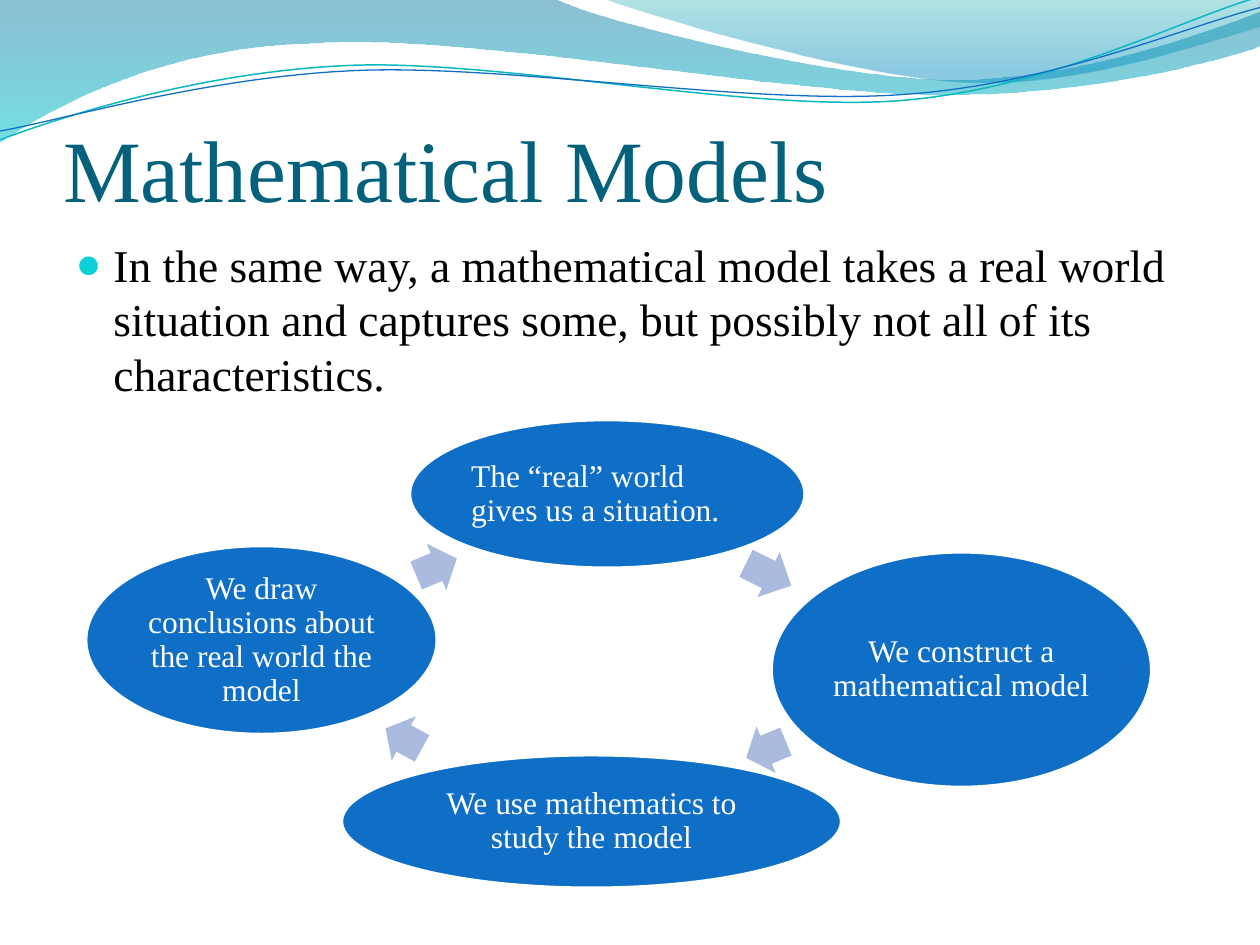
from dataclasses import dataclass
from itertools import islice

from lxml.etree import SubElement
from pptx import Presentation
from pptx.dml.color import RGBColor
from pptx.enum.shapes import MSO_SHAPE
from pptx.enum.text import MSO_ANCHOR, MSO_AUTO_SIZE, PP_ALIGN
from pptx.oxml.ns import qn
from pptx.util import Inches, Pt

COLUMNS, ROWS = 100, 75


@dataclass(frozen=True)
class Theme:
    """Colours and type sizes of the slide."""
    font: str = "Times New Roman"
    title: str = "04617B"
    body: str = "000000"
    bullet: str = "0BD0D9"
    step: str = "0F6FC6"
    light: str = "FFFFFF"
    arrow: str = "ABBBDF"
    title_size: int = 50
    body_size: int = 26
    step_size: int = 18


@dataclass(frozen=True)
class Box:
    """A region measured in grid columns and rows of a given cell size."""
    left: float
    top: float
    width: float
    height: float
    cell_width: float
    cell_height: float

    def point(self, column, row):
        """Return the slide position of a point inside the box."""
        return (round((self.left + column) * self.cell_width),
                round((self.top + row) * self.cell_height))

    def inner(self, left, top, width, height):
        """Return a box placed relative to this one."""
        return Box(self.left + left, self.top + top, width, height,
                   self.cell_width, self.cell_height)

    def frame(self):
        """Return left, top, width and height as slide lengths."""
        return (*self.point(0, 0), round(self.width * self.cell_width),
                round(self.height * self.cell_height))


THEME = Theme()

WAVE_FILLS = [
    ((0, 0), [(44, -0.1), (47.6, 1.7, 66.4, 6.3, 75.8, 6.3),
              (85.3, 6.3, 95.8, 2.6, 100, 0.9), (100.1, 3.6),
              (98.3, 4.4, 87, 7.6, 74.6, 7.5),
              (62.2, 7.5, 38.2, 2.8, 25.7, 3.4),
              (12.9, 3.6, 4.6, 8.3, -0.1, 11.3)],
     [(0, "0074A1", 45), (1, "00C6CF", 55)]),
    ((47.9, -0.1), [(50.9, 1.1, 68.2, 6.2, 76.9, 6.5),
                    (85.6, 6.9, 96.1, 3.2, 100, 2.1), (100, 0)],
     [(0, "00A1A9", 30), (0.8, "008BBF", 45)]),
]
WAVE_LINES = [
    ((0, 11.1), [(4.8, 9.3, 15.8, 5.7, 27.7, 5.2),
                 (39.5, 4.7, 59.3, 8.9, 71.3, 8),
                 (83.3, 7.1, 93.8, 1.5, 99.8, -0.2)], "0AB8BF", 0.85),
    ((0, 10.4), [(4.7, 9.6, 16.4, 6.1, 28.3, 5.6),
                 (40.3, 5.1, 59.7, 8.4, 71.7, 7.5),
                 (83.6, 6.7, 94.1, 2.1, 100, 0.6)], "0F6FC6", 0.75),
]
STEPS = [
    ("The “real” world gives us a situation.", (25.7, 0, 31.4, 11.8), PP_ALIGN.LEFT),
    ("We construct a mathematical model", (54.4, 10.5, 30.2, 18.7), PP_ALIGN.CENTER),
    ("We use mathematics to study the model", (20.3, 26.6, 39.7, 10.6), PP_ALIGN.CENTER),
    ("We draw conclusions about the real world the model", (0, 10, 27.9, 15),
     PP_ALIGN.CENTER),
]
ARROWS = [
    ((52.2, 10.3, 4, 4), 26.3),
    ((52.3, 24.2, 3.4, 4), 157.7),
    ((23.6, 23.3, 3.3, 4), 208.7),
    ((26.1, 9.7, 3.5, 4), 337.2),
]


def apply_formats(target, formats):
    """Set every attribute named in a dict of format values."""
    for name, value in formats.items():
        setattr(target, name, value)


def place(shape, box):
    """Move a shape to a box."""
    apply_formats(shape, dict(zip(("left", "top", "width", "height"), box.frame())))


def write(shape, text, size, color, paragraph_formats, frame_formats):
    """Write one formatted paragraph into a shape."""
    frame = shape.text_frame
    apply_formats(frame, {"word_wrap": True, "auto_size": MSO_AUTO_SIZE.NONE,
                          **frame_formats})
    paragraph = frame.paragraphs[0]
    apply_formats(paragraph, paragraph_formats)
    run = paragraph.add_run()
    run.text = text
    apply_formats(run.font, {"name": THEME.font, "size": Pt(size)})
    run.font.color.rgb = RGBColor.from_string(color)
    return paragraph


def add_path(slide, box, start, segments, close):
    """Draw an outline whose six-number segments are Bézier curves."""
    points = [box.point(*segment[index:index + 2])
              for segment in segments for index in range(0, len(segment), 2)]
    builder = slide.shapes.build_freeform(*box.point(*start))
    builder.add_line_segments(points, close=close)
    shape = builder.convert_to_shape()
    shape.shadow.inherit = False
    outline = next(shape.element.iter(qn("a:path")))
    lines = iter(outline.findall(qn("a:lnTo")))
    for segment in segments:
        parts = list(islice(lines, len(segment) // 2))
        if len(parts) == 3:
            curve = SubElement(outline, qn("a:cubicBezTo"))
            parts[0].addprevious(curve)
            for part in parts:
                curve.append(part[0])
                outline.remove(part)
    return shape


def add_waves(slide, box):
    """Draw the translucent waves and thin curves of the header."""
    for start, segments, stops in WAVE_FILLS:
        shape = add_path(slide, box, start, segments, True)
        shape.line.fill.background()
        shape.fill.gradient()
        shape.fill.gradient_angle = 270
        for stop, (position, color, _) in zip(shape.fill.gradient_stops, stops):
            stop.position = position
            stop.color.rgb = RGBColor.from_string(color)
        colors = shape.element.spPr.iter(qn("a:srgbClr"))
        for element, (_, _, opacity) in zip(colors, stops):
            SubElement(element, qn("a:alpha"), val=str(opacity * 1000))
    for start, segments, color, width in WAVE_LINES:
        shape = add_path(slide, box, start, segments, False)
        shape.fill.background()
        shape.line.color.rgb = RGBColor.from_string(color)
        shape.line.width = Pt(width)


def add_title(slide, box):
    """Fill the title placeholder."""
    title = slide.shapes.title
    place(title, box)
    write(title, "Mathematical Models", THEME.title_size, THEME.title,
          {"alignment": PP_ALIGN.LEFT},
          {"vertical_anchor": MSO_ANCHOR.BOTTOM, "margin_left": 0, "margin_right": 0,
           "margin_top": Inches(0.05), "margin_bottom": 0})
    slide.shapes.element.append(title.element)


def add_body(slide, box):
    """Fill the body placeholder with one bulleted paragraph."""
    body = slide.placeholders[1]
    place(body, box)
    paragraph = write(
        body, "In the same way, a mathematical model takes a real world situation "
        "and captures some, but possibly not all of its characteristics.",
        THEME.body_size, THEME.body, {"alignment": PP_ALIGN.LEFT}, {})
    properties = paragraph._p.get_or_add_pPr()
    properties.set("marL", str(Inches(0.3)))
    properties.set("indent", str(Inches(-0.3)))
    SubElement(SubElement(properties, qn("a:buClr")), qn("a:srgbClr"), val=THEME.bullet)
    SubElement(properties, qn("a:buSzPct"), val="95000")
    SubElement(properties, qn("a:buFont"), typeface=THEME.font)
    SubElement(properties, qn("a:buChar"), char="●")
    slide.shapes.element.append(body.element)


def add_solid(slide, kind, box, color):
    """Add a flat preset shape without an outline."""
    shape = slide.shapes.add_shape(kind, *box.frame())
    shape.shadow.inherit = False
    shape.fill.solid()
    shape.fill.fore_color.rgb = RGBColor.from_string(color)
    shape.line.fill.background()
    return shape


def add_cycle(slide, box):
    """Draw the four modelling steps and the arrows between them."""
    margins = {f"margin_{side}": Inches(0.03) for side in ("left", "top", "right", "bottom")}
    for (text, area, alignment), (arrow_area, rotation) in zip(STEPS, ARROWS):
        step = add_solid(slide, MSO_SHAPE.OVAL, box.inner(*area), THEME.step)
        step.line.color.rgb = RGBColor.from_string(THEME.light)
        step.line.width = Pt(2)
        write(step, text, THEME.step_size, THEME.light,
              {"alignment": alignment, "line_spacing": 0.9},
              {"vertical_anchor": MSO_ANCHOR.MIDDLE, **margins})
        arrow = add_solid(slide, MSO_SHAPE.RIGHT_ARROW, box.inner(*arrow_area), THEME.arrow)
        arrow.rotation = rotation
        arrow.adjustments[0], arrow.adjustments[1] = 0.6, 0.5


def main():
    """Build and save the slide."""
    presentation = Presentation()
    apply_formats(presentation, {"slide_width": Inches(10), "slide_height": Inches(7.5)})
    slide = presentation.slides.add_slide(presentation.slide_layouts[1])
    page = Box(0, 0, COLUMNS, ROWS, presentation.slide_width / COLUMNS,
               presentation.slide_height / ROWS)
    add_waves(slide, page.inner(0, 0, 100, 11.4))
    add_title(slide, page.inner(5, 5, 90, 12.5))
    add_body(slide, page.inner(5, 18.3, 90, 15))
    add_cycle(slide, page.inner(6.8, 33.3, 84.6, 37.2))
    presentation.save("out.pptx")


if __name__ == "__main__":
    main()
